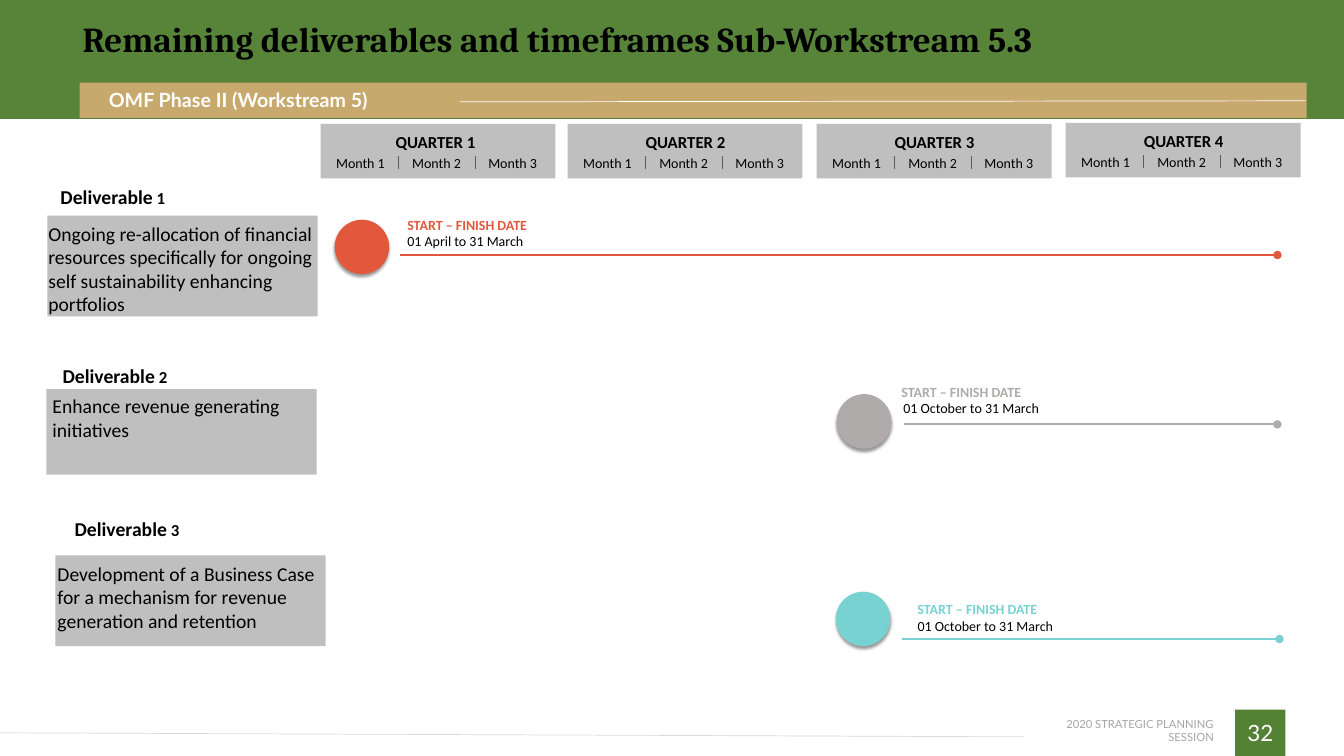
from pptx import Presentation
from pptx.dml.color import RGBColor
from pptx.enum.shapes import MSO_CONNECTOR as Connector, MSO_SHAPE as Preset
from pptx.enum.text import MSO_ANCHOR as Anchor, PP_ALIGN as Align
from pptx.oxml import parse_xml
from pptx.oxml.ns import nsdecls, qn
from pptx.util import Inches, Pt
from lxml.etree import SubElement

COLORS = {
    "green": "548235", "gold": "C7A96E", "panel": "BFBFBF",
    "black": "000000", "white": "FFFFFF", "divider": "595959",
    "footer": "A6A6A6", "footer_line": "D9D9D9",
    "red": "E2583D", "gray": "AFABAB", "teal": "78D2D2",
}


class TimelineSlide:
    """Holds the style and the current slide."""

    def __init__(self, slide, body_font="Calibri"):
        self.slide = slide
        self.body_font = body_font

    def shape(self, preset, box, color, opacity=None, shadow=False):
        shape = self.slide.shapes.add_shape(preset, *map(Inches, box))
        shape.shadow.inherit = False
        shape.fill.solid()
        shape.fill.fore_color.rgb = RGBColor.from_string(COLORS[color])
        shape.line.fill.background()
        if opacity:
            fill_color = shape.fill._xPr.find(".//" + qn("a:srgbClr"))
            SubElement(fill_color, qn("a:alpha"), val=str(opacity * 1000))
        if shadow:
            effects = shape._element.spPr.find(qn("a:effectLst"))
            effects.append(parse_xml(
                f'<a:outerShdw {nsdecls("a")} blurRad="{Pt(2)}" dist="{Pt(2)}" '
                'dir="5400000" algn="ctr" rotWithShape="0"><a:srgbClr val="000000">'
                '<a:alpha val="40000"/></a:srgbClr></a:outerShdw>'))
        return shape

    def line(self, start, end, color, width=0.5, dot=False):
        connector = self.slide.shapes.add_connector(
            Connector.STRAIGHT, *map(Inches, (*start, *end)))
        connector.line.color.rgb = RGBColor.from_string(COLORS[color])
        connector.line.width = Pt(width)
        if dot:
            SubElement(connector.line._get_or_add_ln(), qn("a:tailEnd"), type="oval")
        SubElement(connector._element.spPr, qn("a:effectLst"))

    def run(self, paragraph, text, size, color="black", bold=False, font=None):
        run = paragraph.add_run()
        run.text = text
        run.font.name = font or self.body_font
        run.font.size = Pt(size)
        run.font.bold = bold
        run.font.color.rgb = RGBColor.from_string(COLORS[color])

    def text(self, box, text, size, align=Align.LEFT, anchor=Anchor.TOP, **style):
        text_box = self.slide.shapes.add_textbox(*map(Inches, box))
        frame = text_box.text_frame
        frame.word_wrap = True
        frame.vertical_anchor = anchor
        frame.margin_left = frame.margin_right = 0
        frame.margin_top = frame.margin_bottom = 0
        paragraph = frame.paragraphs[0]
        paragraph.alignment = align
        self.run(paragraph, text, size, **style)
        return paragraph

    def quarter(self, number, left, top, heading_left):
        self.shape(Preset.RECTANGLE, (left, top, 2.33, 0.54), "panel")
        self.text((heading_left, top + 0.08, 1.12, 0.2), f"QUARTER {number}", 12,
                  Align.CENTER, bold=True)
        for month in range(3):
            self.text((left + 0.07 + 0.755 * month, top + 0.3, 0.65, 0.17),
                      f"Month {month + 1}", 10, Align.CENTER)
        for month in range(2):
            x = left + 0.77 + 0.76 * month
            self.line((x, top + 0.32), (x, top + 0.45), "divider")

    def deliverable(self, number, label_at, panel, text_box, description):
        self.shape(Preset.RECTANGLE, panel, "panel")
        label = self.text((*label_at, 1.31, 0.24), "Deliverable", 14, bold=True)
        self.run(label, f" {number}", 12, bold=True)
        self.text(text_box, description, 14)

    def period(self, color, circle_at, start, end_x, label_at, dates_at, dates):
        self.shape(Preset.OVAL, (*circle_at, 0.54, 0.54), color, shadow=True)
        self.line(start, (end_x, start[1]), color, 1.5, dot=True)
        self.text((*label_at, 2.14, 0.17), "START – FINISH DATE", 10,
                  color=color, bold=True)
        self.text((*dates_at, 2.69, 0.17), dates, 10)


def main():
    presentation = Presentation()
    presentation.slide_width = Inches(13.33)
    presentation.slide_height = Inches(7.5)
    page = TimelineSlide(presentation.slides.add_slide(presentation.slide_layouts[6]))

    # Footer
    number_box = page.shape(Preset.RECTANGLE, (12.25, 7.04, 0.5, 0.46), "green")
    number_box.text_frame.vertical_anchor = Anchor.MIDDLE
    number = number_box.text_frame.paragraphs[0]
    number.alignment = Align.CENTER
    page.run(number, "32", 16, color="white", font="Lato")
    page.text((10.15, 7.18, 1.89, 0.13), "2020 STRATEGIC PLANNING SESSION", 8,
              Align.RIGHT, Anchor.MIDDLE, color="footer", font="Lato")
    page.line((10.15, 7.31), (0, 7.27), "footer_line")

    # Header: two translucent layers, subtitle bar and title
    for _ in range(2):
        page.shape(Preset.RECTANGLE, (0, 0, 13.33, 1.18), "green", opacity=85)
    page.shape(Preset.RECTANGLE, (0.79, 0.82, 12.17, 0.35), "gold")
    page.text((1.08, 0.87, 3.48, 0.24), "OMF Phase II (Workstream 5)", 14,
              anchor=Anchor.MIDDLE, color="white", bold=True, font="Lato")
    page.line((4.56, 1.01), (12.95, 1), "white")
    title = page.text((0.82, 0, 12.4, 0.82),
                      "Remaining deliverables and timeframes Sub-Workstream 5.3", 25,
                      anchor=Anchor.MIDDLE, bold=True, font="Cambria")
    title.line_spacing = 0.9

    # Quarters: left, top, heading left
    quarters = [(3.18, 1.23, 3.76), (5.63, 1.23, 6.24),
                (8.1, 1.23, 8.71), (10.57, 1.22, 11.18)]
    for index, place in enumerate(quarters, 1):
        page.quarter(index, *place)

    # Deliverables: label, panel, text box, description
    deliverables = [
        ((0.6, 1.83), (0.47, 2.14, 2.68, 1), (0.48, 2.2, 2.64, 0.95),
         "Ongoing re-allocation of financial resources specifically for ongoing "
         "self sustainability enhancing portfolios"),
        ((0.62, 3.61), (0.46, 3.86, 2.68, 0.85), (0.52, 3.91, 2.68, 0.48),
         "Enhance revenue generating initiatives"),
        ((0.74, 5.13), (0.55, 5.51, 2.68, 0.9), (0.57, 5.57, 2.58, 0.71),
         "Development of a Business Case for a mechanism for revenue "
         "generation and retention"),
    ]
    for index, parts in enumerate(deliverables, 1):
        page.deliverable(index, *parts)

    # Periods: color, circle, line start, line end, label, dates
    periods = [
        ("red", (3.32, 2.18), (3.97, 2.53), 12.67, (4.04, 2.15), (4.04, 2.31),
         "01 April to 31 March"),
        ("gray", (8.3, 3.91), (8.97, 4.21), 12.67, (8.94, 3.8), (8.96, 3.96),
         "01 October to 31 March"),
        ("teal", (8.29, 5.87), (8.95, 6.34), 12.69, (9.1, 5.96), (9.1, 6.13),
         "01 October to 31 March"),
    ]
    for parts in periods:
        page.period(*parts)

    presentation.save("out.pptx")


if __name__ == "__main__":
    main()
